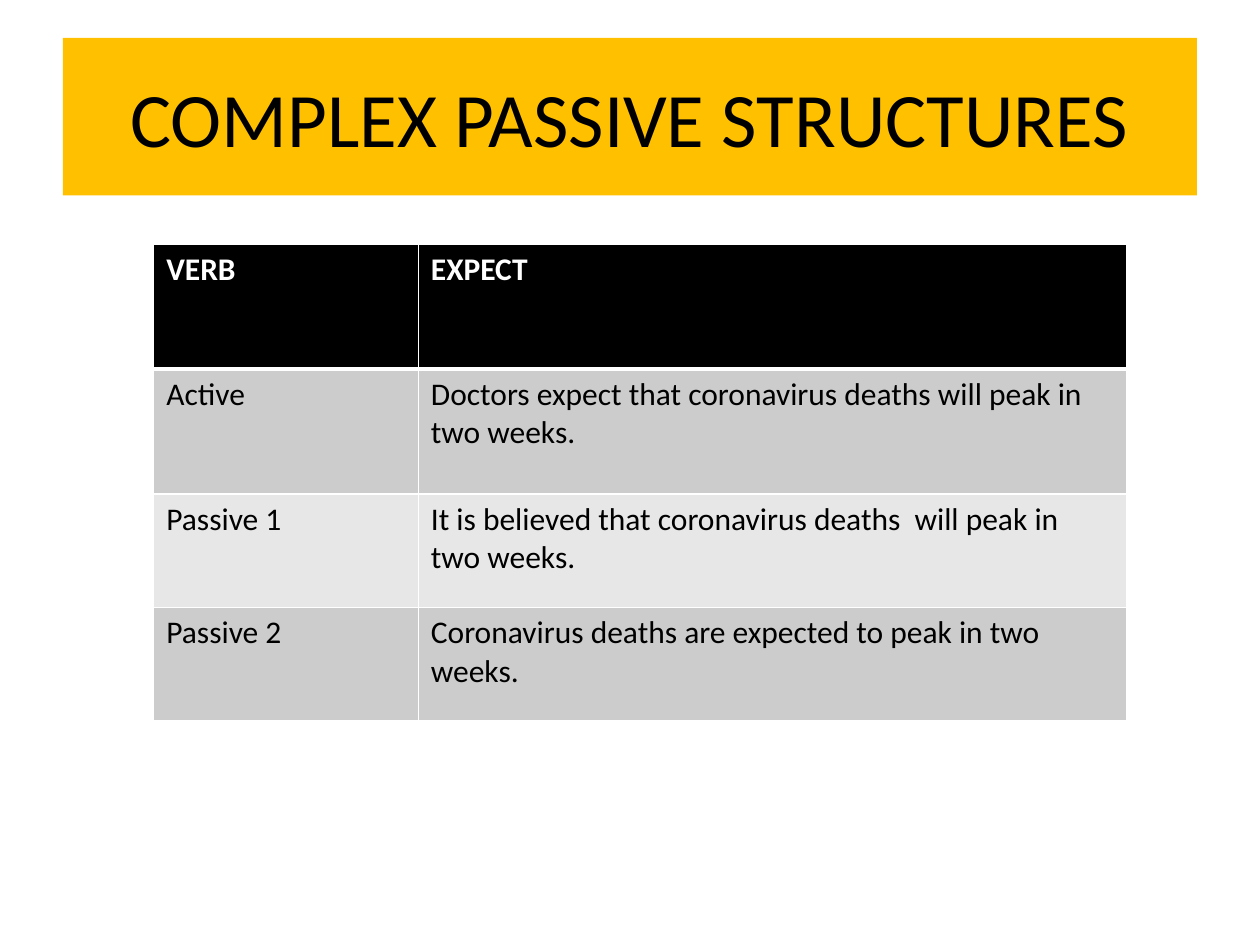
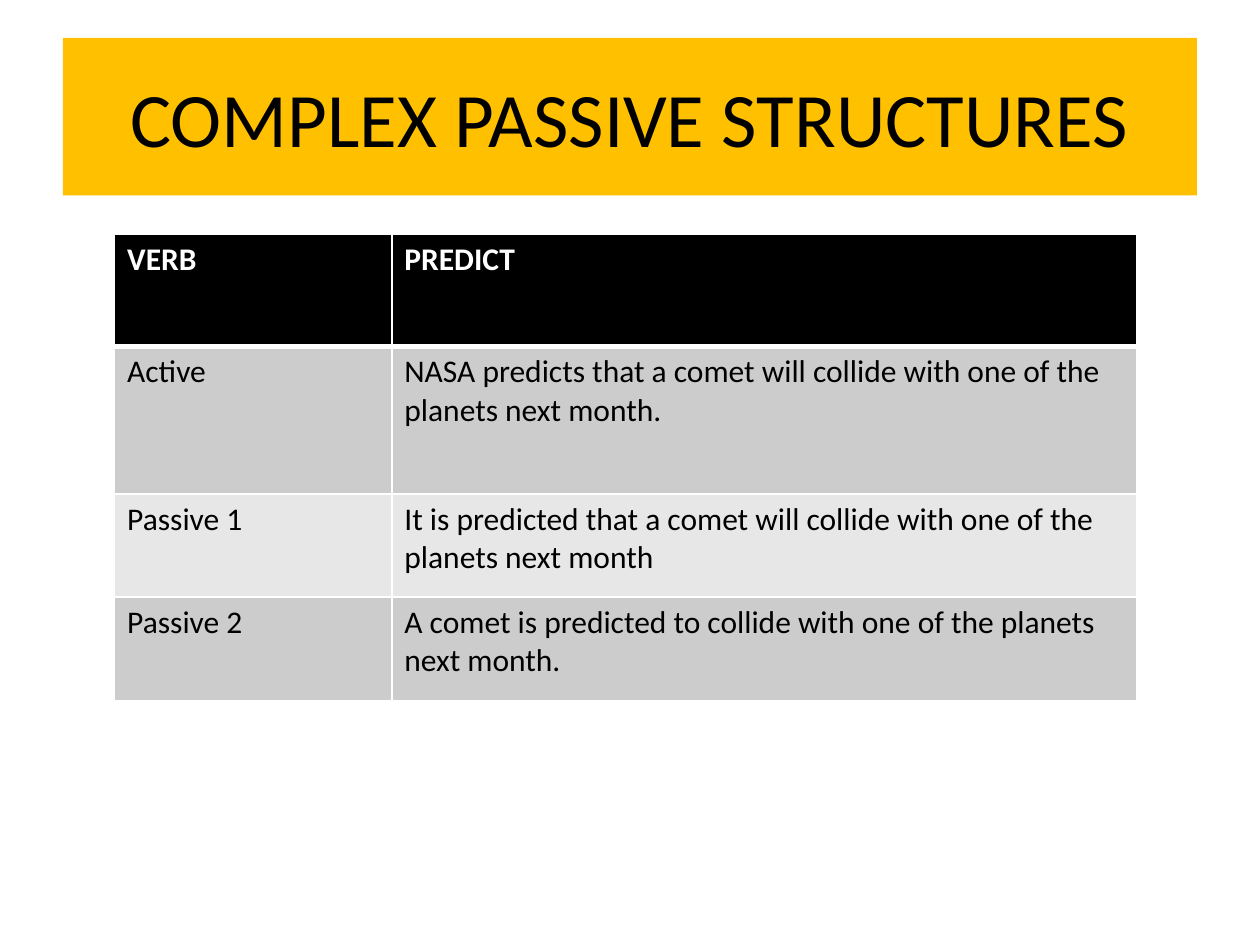
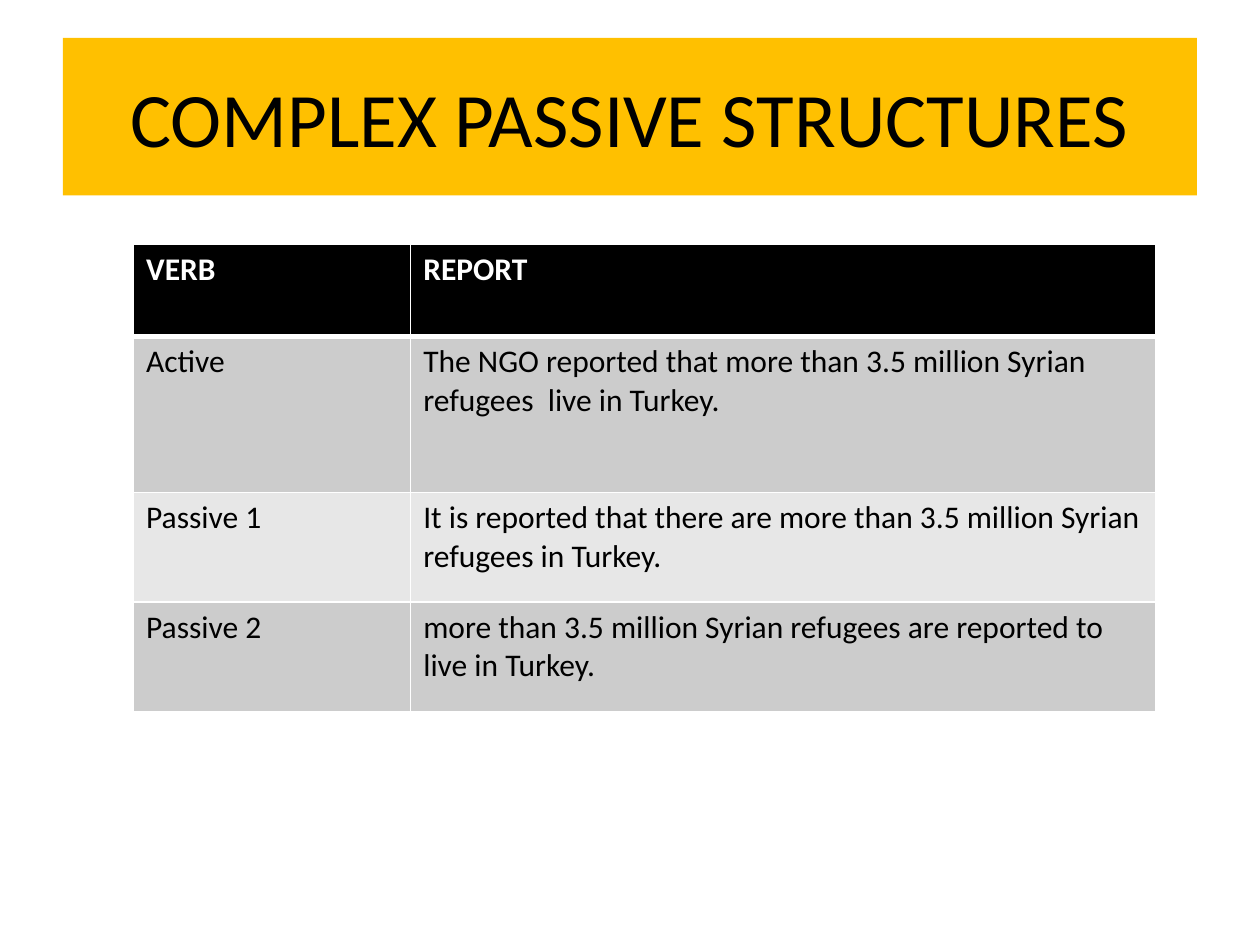
from dataclasses import dataclass

from lxml import etree
from pptx import Presentation
from pptx import util as u
from pptx.dml.color import RGBColor
from pptx.enum import shapes, text
from pptx.oxml.ns import qn

# Shared look
COLOURS = {
    "band": "FFC000",
    "ink": "000000",
    "paper": "FFFFFF",
    "odd_row": "CCCCCC",
    "even_row": "E7E7E7",
}
FONT = "Calibri"
TITLE = "COMPLEX PASSIVE STRUCTURES"
LABELS = ("VERB", "Active", "Passive 1", "Passive 2")
THIN, THICK = 1, 3

# Grid of 100 columns by 75 rows over the slide
WIDTH, HEIGHT = u.Inches(10), u.Inches(7.5)
COLUMN, ROW = WIDTH / 100, HEIGHT / 75


@dataclass
class VerbTable:
    """One verb with its three sentences; lengths are in grid units."""
    left: float
    top: float
    columns: tuple[float, float]
    rows: tuple[float, float, float, float]
    verb: str
    sentences: tuple[str, str, str]


VERB_TABLES = [
    VerbTable(12.2, 19.4, (21, 56.2), (9.9, 9.9, 9, 9), "EXPECT", (
        "Doctors expect that coronavirus deaths will peak in  two weeks.",
        "It is believed that coronavirus deaths  will peak in two weeks.",
        "Coronavirus deaths are expected to peak in two weeks.",
    )),
    VerbTable(9.1, 18.6, (22, 59.1), (8.9, 11.7, 8.2, 8.2), "PREDICT", (
        "NASA predicts that a comet will collide with one of the planets next month.",
        "It is predicted that a comet will collide with one of the planets next month",
        "A comet is predicted to collide with one of the planets next month.",
    )),
    VerbTable(10.6, 19.4, (22, 59.1), (7.3, 12.4, 8.7, 8.7), "REPORT", (
        "The NGO reported that more than 3.5 million Syrian refugees  live in Turkey.",
        "It is reported that there are more than 3.5 million Syrian refugees in Turkey.",
        "more than 3.5 million Syrian refugees are reported to live in Turkey.",
    )),
]


def across(units: float) -> int:
    return u.Emu(round(units * COLUMN))


def down(units: float) -> int:
    return u.Emu(round(units * ROW))


def colour(name: str) -> RGBColor:
    return RGBColor.from_string(COLOURS[name])


def write(frame, words: str, *, size: float = 18, ink: str = "ink",
          bold: bool = False, align=text.PP_ALIGN.LEFT) -> None:
    paragraph = frame.paragraphs[0]
    paragraph.alignment = align
    run = paragraph.add_run()
    run.text = words
    run.font.name = FONT
    run.font.size = u.Pt(size)
    run.font.bold = bold
    run.font.color.rgb = colour(ink)


def set_borders(cell, top: float, bottom: float) -> None:
    properties = cell._tc.get_or_add_tcPr()
    for side, points in (("L", THIN), ("R", THIN), ("T", top), ("B", bottom)):
        line = etree.SubElement(properties, qn(f"a:ln{side}"), w=str(u.Pt(points)))
        fill = etree.SubElement(line, qn("a:solidFill"))
        etree.SubElement(fill, qn("a:srgbClr"), val=COLOURS["paper"])


def add_title_band(slide) -> None:
    band = slide.shapes.add_shape(shapes.MSO_SHAPE.RECTANGLE,
                                  across(5), down(3), across(90), down(12.5))
    band.shadow.inherit = False
    band.fill.solid()
    band.fill.fore_color.rgb = colour("band")
    band.line.fill.background()
    band.text_frame.word_wrap = True
    band.text_frame.vertical_anchor = text.MSO_ANCHOR.MIDDLE
    write(band.text_frame, TITLE, size=44, align=text.PP_ALIGN.CENTER)


def add_verb_table(slide, item: VerbTable) -> None:
    table = slide.shapes.add_table(
        len(item.rows), len(item.columns), across(item.left), down(item.top),
        across(sum(item.columns)), down(sum(item.rows))).table
    table.horz_banding = False
    for column, width in zip(table.columns, item.columns):
        column.width = across(width)
    for row, height in zip(table.rows, item.rows):
        row.height = down(height)

    contents = zip(LABELS, (item.verb, *item.sentences))
    for row_index, row_words in enumerate(contents):
        header = row_index == 0
        shade = "ink" if header else "odd_row" if row_index % 2 else "even_row"
        for column_index, words in enumerate(row_words):
            cell = table.cell(row_index, column_index)
            set_borders(cell, top=THICK if row_index == 1 else THIN,
                        bottom=THICK if header else THIN)
            cell.fill.solid()
            cell.fill.fore_color.rgb = colour(shade)
            write(cell.text_frame, words, bold=header,
                  ink="paper" if header else "ink")


def main() -> None:
    presentation = Presentation()
    presentation.slide_width, presentation.slide_height = WIDTH, HEIGHT
    blank = presentation.slide_layouts[6]
    for item in VERB_TABLES:
        slide = presentation.slides.add_slide(blank)
        add_verb_table(slide, item)
        add_title_band(slide)
    presentation.save("out.pptx")


if __name__ == "__main__":
    main()
